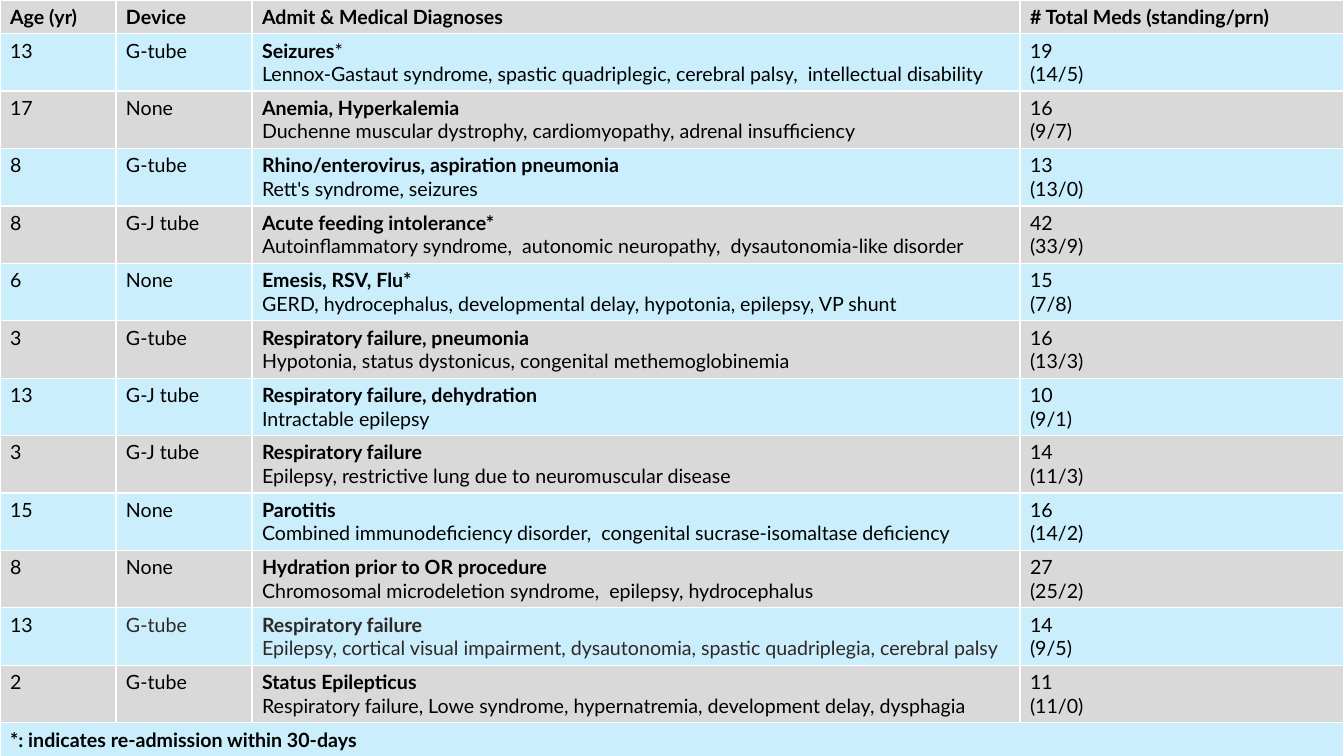
from lxml.etree import SubElement
from pptx import Presentation
from pptx.dml.color import RGBColor
from pptx.oxml.ns import qn
from pptx.util import Emu, Pt

PX = 4572  # 200 px to the inch
SLIDE_WIDTH, SLIDE_HEIGHT = 2667, 1500
COLUMN_WIDTHS = [230, 270, 1524, 643]
SINGLE_ROW, DOUBLE_ROW = 66, 114
GRAY, BLUE, WHITE = "D9D9D9", "CAEEFB", "FFFFFF"
BLACK, DARK_BROWN = "000000", "2F2826"

HEADERS = ["Age (yr)", "Device", "Admit & Medical Diagnoses", "# Total Meds (standing/prn)"]
FOOTNOTE = "*: indicates re-admission within 30-days"
# age, device, admit diagnosis, medical diagnoses, total meds, standing/prn
PATIENTS = [
    ("13", "G-tube", "Seizures*",
     "Lennox-Gastaut syndrome, spastic quadriplegic, cerebral palsy,  intellectual disability",
     "19", "(14/5)"),
    ("17", "None", "Anemia, Hyperkalemia",
     "Duchenne muscular dystrophy, cardiomyopathy, adrenal insufficiency", "16", "(9/7)"),
    ("8", "G-tube", "Rhino/enterovirus, aspiration pneumonia",
     "Rett's syndrome, seizures", "13", "(13/0)"),
    ("8", "G-J tube", "Acute feeding intolerance*",
     "Autoinflammatory syndrome,  autonomic neuropathy,  dysautonomia-like disorder",
     "42", "(33/9)"),
    ("6", "None", "Emesis, RSV, Flu*",
     "GERD, hydrocephalus, developmental delay, hypotonia, epilepsy, VP shunt", "15", "(7/8)"),
    ("3", "G-tube", "Respiratory failure, pneumonia",
     "Hypotonia, status dystonicus, congenital methemoglobinemia", "16", "(13/3)"),
    ("13", "G-J tube", "Respiratory failure, dehydration",
     "Intractable epilepsy", "10", "(9/1)"),
    ("3", "G-J tube", "Respiratory failure",
     "Epilepsy, restrictive lung due to neuromuscular disease", "14", "(11/3)"),
    ("15", "None", "Parotitis",
     "Combined immunodeficiency disorder,  congenital sucrase-isomaltase deficiency",
     "16", "(14/2)"),
    ("8", "None", "Hydration prior to OR procedure",
     "Chromosomal microdeletion syndrome,  epilepsy, hydrocephalus", "27", "(25/2)"),
    ("13", "G-tube", "Respiratory failure",
     "Epilepsy, cortical visual impairment, dysautonomia, spastic quadriplegia, cerebral palsy",
     "14", "(9/5)"),
    ("2", "G-tube", "Status Epilepticus",
     "Respiratory failure, Lowe syndrome, hypernatremia, development delay, dysphagia",
     "11", "(11/0)"),
]
BROWN_PATIENT = 11


def px(length):
    return Emu(length * PX)


def color(hex_code):
    return RGBColor.from_string(hex_code)


def add_text(paragraph, text, bold=False, text_color=BLACK, size=14, font_name="Lato"):
    run = paragraph.add_run()
    run.text = text
    run.font.name = font_name
    run.font.size = Pt(size)
    run.font.bold = bold
    run.font.color.rgb = color(text_color)


def style_cell(cell, fill):
    properties = cell._tc.get_or_add_tcPr()
    for side in ("a:lnL", "a:lnR", "a:lnT", "a:lnB"):
        line = SubElement(properties, qn(side), w=str(Pt(1)))
        solid = SubElement(line, qn("a:solidFill"))
        SubElement(solid, qn("a:srgbClr"), val=WHITE)
    cell.fill.solid()
    cell.fill.fore_color.rgb = color(fill)


def write_lines(cell, *lines, **text_format):
    frame = cell.text_frame
    for index, line in enumerate(lines):
        paragraph = frame.add_paragraph() if index else frame.paragraphs[0]
        add_text(paragraph, line, **text_format)


def write_diagnoses(cell, admit, medical, text_color, plain_star):
    """Write the admit diagnosis in bold above the medical ones."""
    first = cell.text_frame.paragraphs[0]
    add_text(first, admit.rstrip("*") if plain_star else admit, bold=True, text_color=text_color)
    if plain_star:
        add_text(first, "*", text_color=text_color)
    add_text(cell.text_frame.add_paragraph(), medical, text_color=text_color)


def add_patient_table(slide):
    row_heights = [SINGLE_ROW] + [DOUBLE_ROW] * len(PATIENTS) + [SINGLE_ROW]
    frame = slide.shapes.add_table(len(row_heights), len(COLUMN_WIDTHS), px(0), px(0),
                                   px(SLIDE_WIDTH), px(SLIDE_HEIGHT))
    table = frame.table
    table.first_row = table.horz_banding = False
    for column, width in zip(table.columns, COLUMN_WIDTHS):
        column.width = px(width)
    for index, (row, height) in enumerate(zip(table.rows, row_heights)):
        row.height = px(height)
        for cell in row.cells:
            style_cell(cell, BLUE if index % 2 else GRAY)
    return table


def main():
    presentation = Presentation()
    presentation.slide_width = px(SLIDE_WIDTH)
    presentation.slide_height = px(SLIDE_HEIGHT)
    slide = presentation.slides.add_slide(presentation.slide_layouts[6])
    table = add_patient_table(slide)

    for column, header in enumerate(HEADERS):
        write_lines(table.cell(0, column), header, bold=True)
    for row, (age, device, admit, medical, total, split) in enumerate(PATIENTS, start=1):
        text_color = DARK_BROWN if row == BROWN_PATIENT else BLACK
        write_lines(table.cell(row, 0), age)
        write_lines(table.cell(row, 1), device, text_color=text_color)
        write_diagnoses(table.cell(row, 2), admit, medical, text_color, plain_star=row == 1)
        write_lines(table.cell(row, 3), total, split)

    last_row = len(PATIENTS) + 1
    footnote = table.cell(last_row, 0)
    footnote.merge(table.cell(last_row, len(COLUMN_WIDTHS) - 1))
    write_lines(footnote, FOOTNOTE, bold=True)

    presentation.save("out.pptx")


if __name__ == "__main__":
    main()
